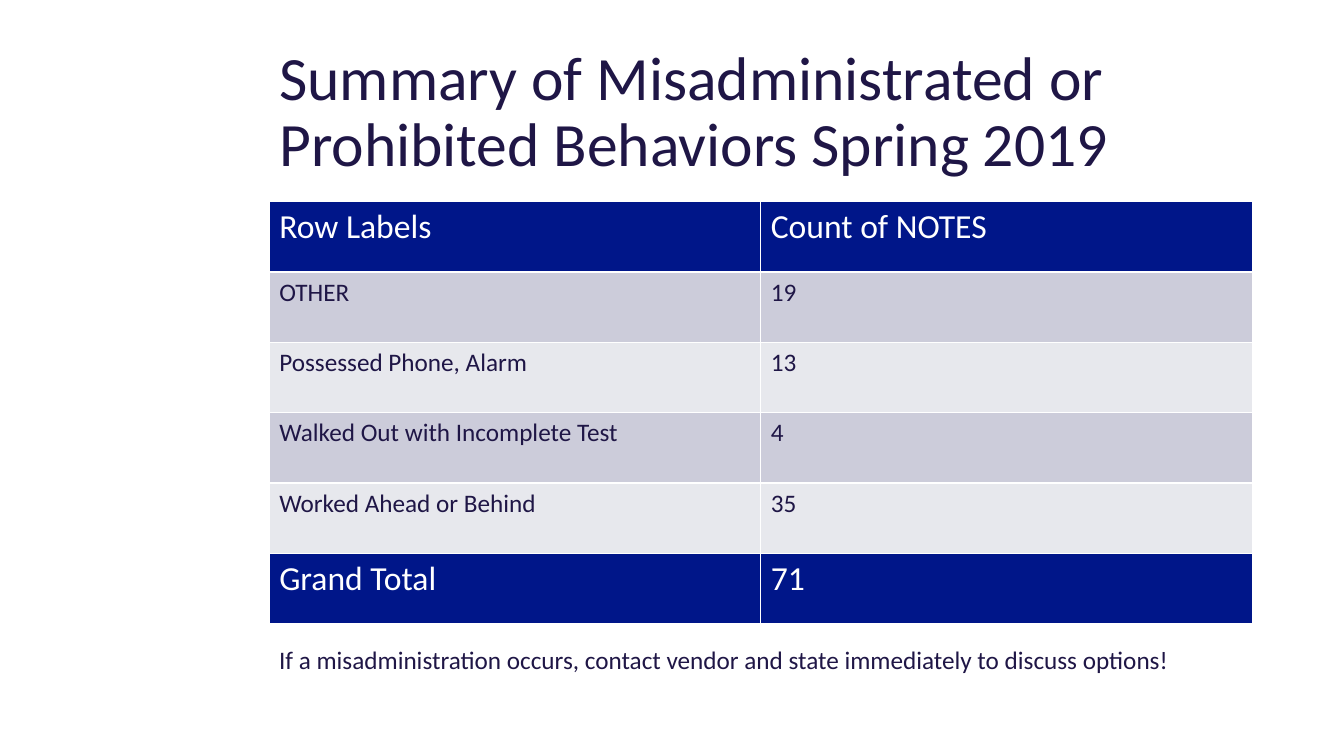
from pptx import Presentation
from pptx.dml.color import RGBColor
from pptx.enum.text import MSO_ANCHOR, MSO_AUTO_SIZE, PP_ALIGN
from pptx.util import Inches, Pt

NAVY = RGBColor(0x00, 0x16, 0x89)
INK = RGBColor(0x1F, 0x16, 0x46)
WHITE = RGBColor(0xFF, 0xFF, 0xFF)
DARK_BAND = RGBColor(0xCC, 0xCC, 0xDA)
LIGHT_BAND = RGBColor(0xE7, 0xE8, 0xED)

LEFT, WIDTH = Inches(2.67), Inches(9.75)
ROWS = [
    ("Row Labels", "Count of NOTES"),
    ("OTHER", "19"),
    ("Possessed Phone, Alarm", "13"),
    ("Walked Out with Incomplete Test", "4"),
    ("Worked Ahead or Behind", "35"),
    ("Grand Total", "71"),
]


def write(text_frame, text, size, color):
    text_frame.text = text
    paragraph = text_frame.paragraphs[0]
    paragraph.alignment = PP_ALIGN.LEFT
    font = paragraph.runs[0].font
    font.color.rgb = color
    for name, value in {"name": "Calibri", "size": Pt(size), "bold": False}.items():
        setattr(font, name, value)
    return paragraph


presentation = Presentation()
presentation.slide_width = Inches(13.33)
presentation.slide_height = Inches(7.5)
slide = presentation.slides.add_slide(presentation.slide_layouts[5])

title = slide.shapes.title
title_place = {"left": LEFT, "top": Inches(0.4), "width": WIDTH, "height": Inches(1.45)}
for name, value in title_place.items():
    setattr(title, name, value)
title_frame = title.text_frame
title_format = {
    "word_wrap": True,
    "auto_size": MSO_AUTO_SIZE.NONE,
    "vertical_anchor": MSO_ANCHOR.MIDDLE,
}
for name, value in title_format.items():
    setattr(title_frame, name, value)
title_text = "Summary of Misadministrated or Prohibited Behaviors Spring 2019"
write(title_frame, title_text, 44, INK).line_spacing = 0.9

table = slide.shapes.add_table(len(ROWS), 2, LEFT, Inches(2), WIDTH, Inches(4.19)).table
table.last_row = True
for row_index, row in enumerate(ROWS):
    emphasized = row_index in (0, len(ROWS) - 1)
    band = DARK_BAND if row_index % 2 else LIGHT_BAND
    for column_index, text in enumerate(row):
        cell = table.cell(row_index, column_index)
        cell.fill.solid()
        cell.fill.fore_color.rgb = NAVY if emphasized else band
        write(cell.text_frame, text, 24 if emphasized else 18, WHITE if emphasized else INK)

note = slide.shapes.add_textbox(LEFT, Inches(6.34), WIDTH, Inches(0.4))
note.text_frame.word_wrap = True
note.text_frame.auto_size = MSO_AUTO_SIZE.SHAPE_TO_FIT_TEXT
note_text = "If a misadministration occurs, contact vendor and state immediately to discuss options!"
write(note.text_frame, note_text, 18, INK)

presentation.save("out.pptx")
